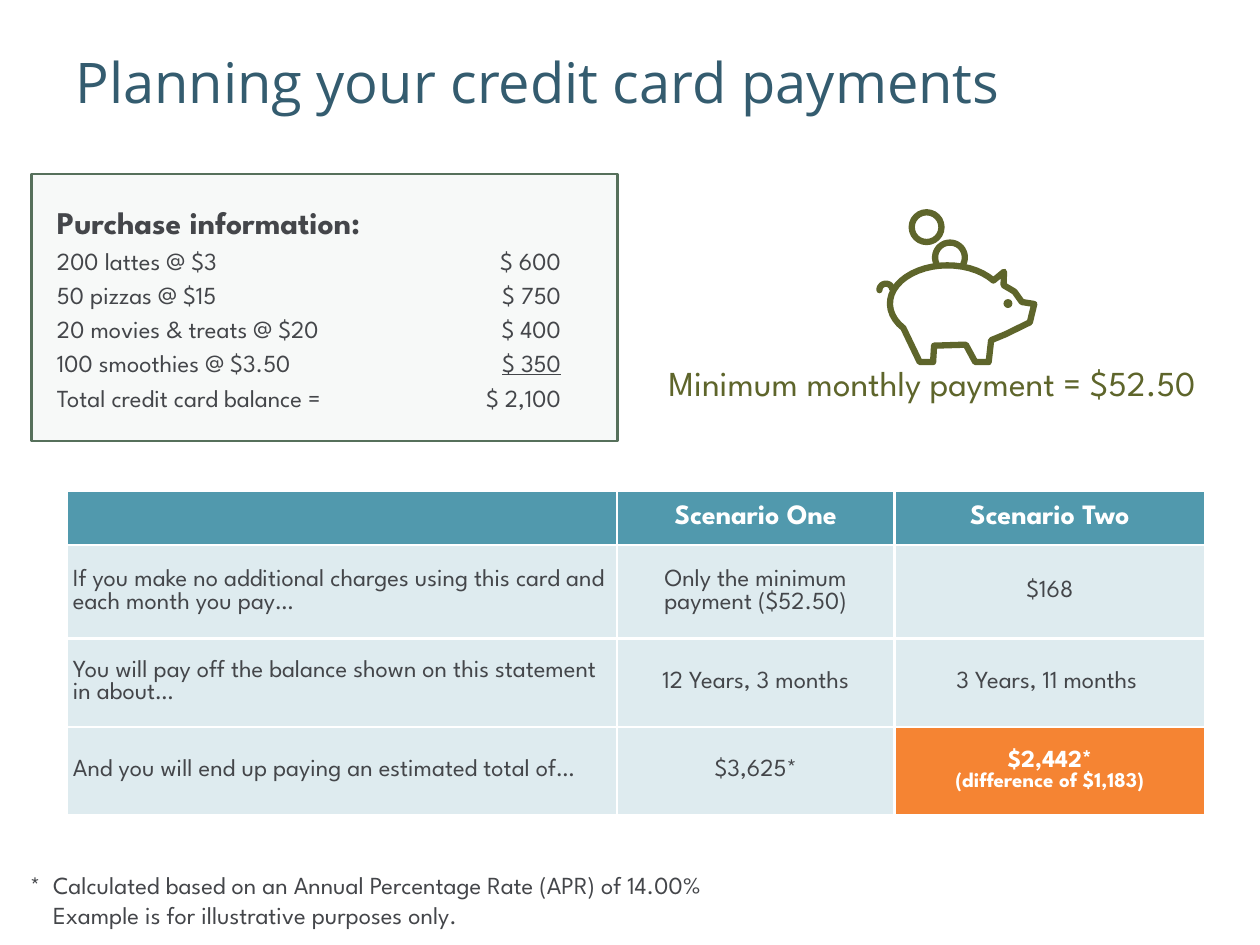
import math

from pptx import Presentation, util as u
from pptx.dml.color import RGBColor
from pptx.enum import shapes, text
from pptx.oxml import ns
from lxml import etree

Cm, Pt = u.Cm, u.Pt
BODY, HEAD = "League Spartan", "Open Sans"
COLORS = {
    "title": "345C6F", "text": "44464A", "white": "FFFFFF", "olive": "5E652B",
    "teal": "5199AD", "orange": "F58433", "panel": "D9E2DA", "panel_line": "56705B",
}

PURCHASES = [
    ("200 lattes @ $3", "$ 600"),
    ("50 pizzas @ $15", "$ 750"),
    ("20 movies & treats @ $20", "$ 400"),
    ("100 smoothies @ $3.50", "$ 350"),
    ("Total credit card balance =", "$ 2,100"),
]
SCENARIOS = [
    ["", "Scenario One", "Scenario Two"],
    ["If you make no additional charges using this card and each month you pay…",
     "Only the minimum payment ($52.50)", "$168"],
    ["You will pay off the balance shown on this statement in about…",
     "12 Years, 3 months", "3 Years, 11 months "],
    ["And you will end up paying an estimated total of…",
     "$3,625*", "$2,442*\n(difference of $1,183)"],
]


def rgb(name):
    return RGBColor.from_string(COLORS[name])


def set_font(p, size, color="text", bold=False, name=BODY):
    f = p.font
    f.name, f.size, f.bold = name, Pt(size), bold
    f.color.rgb = rgb(color)


def set_alpha(element, percent):
    clr = element.find(".//" + ns.qn("a:solidFill") + "/" + ns.qn("a:srgbClr"))
    etree.SubElement(clr, ns.qn("a:alpha"), val=str(percent * 1000))


def set_tab(p, pos, align):
    tabs = etree.SubElement(p._p.get_or_add_pPr(), ns.qn("a:tabLst"))
    etree.SubElement(tabs, ns.qn("a:tab"), pos=str(Cm(pos)), algn=align)


def set_margins(obj, size):
    obj.margin_left = obj.margin_right = obj.margin_top = obj.margin_bottom = Cm(size)


def set_borders(cell, color, width):
    tcPr = cell._tc.get_or_add_tcPr()
    for i, side in enumerate(("lnL", "lnR", "lnT", "lnB")):
        ln = etree.Element(ns.qn("a:" + side), w=str(Pt(width)))
        fill = etree.SubElement(ln, ns.qn("a:solidFill"))
        etree.SubElement(fill, ns.qn("a:srgbClr"), val=COLORS[color])
        tcPr.insert(i, ln)


def add_title(s, title):
    sp = s.shapes.title
    sp.left, sp.top, sp.width, sp.height = Cm(1.52), Cm(0.89), Cm(22.86), Cm(3.18)
    tf = sp.text_frame
    set_margins(tf, 0)
    tf.word_wrap = True
    tf.vertical_anchor = text.MSO_ANCHOR.TOP
    p = tf.paragraphs[0]
    p.text, p.alignment, p.line_spacing = title, text.PP_ALIGN.LEFT, 1.05
    set_font(p, 32, "title", name=HEAD)


def add_text(s, content, x, y, w, h):
    tf = s.shapes.add_textbox(Cm(x), Cm(y), Cm(w), Cm(h)).text_frame
    tf.word_wrap = True
    p = tf.paragraphs[0]
    p.text = content
    return tf, p


def add_purchases(s):
    sp = s.shapes.add_shape(shapes.MSO_SHAPE.RECTANGLE, Cm(0.64), Cm(3.51), Cm(11.81), Cm(5.38))
    sp.shadow.inherit = False
    sp.fill.solid()
    sp.fill.fore_color.rgb = rgb("panel")
    set_alpha(sp._element, 19)
    sp.line.color.rgb, sp.line.width = rgb("panel_line"), Pt(1.5)
    tf = sp.text_frame
    set_margins(tf, 0.51)
    tf.word_wrap = True
    tf.vertical_anchor = text.MSO_ANCHOR.MIDDLE

    heading = tf.paragraphs[0]
    heading.text = "Purchase information:"
    set_font(heading, 18, bold=True)
    for item, amount in PURCHASES:
        p = tf.add_paragraph()
        p.add_run().text = item + "\t"
        r = p.add_run()
        r.text = amount
        if amount == PURCHASES[-2][1]:  # the last amount before the total
            r.font.underline = True
        set_tab(p, 10.16, "r")
        set_font(p, 14)
    for p in tf.paragraphs:
        p.alignment, p.space_before = text.PP_ALIGN.LEFT, Pt(p.font.size.pt * 0.2)


def arc(cx, cy, rx, ry, start, end, steps=24):
    """Points along an ellipse; degrees run clockwise from the right."""
    angles = [math.radians(start + (end - start) * i / steps) for i in range(steps + 1)]
    return [(cx + rx * math.cos(a), cy + ry * math.sin(a)) for a in angles]


def add_stroke(group, points, cx, cy, close=False):
    """Draw a thick line through points given in cm from (cx, cy)."""
    points = [(Cm(cx + x), Cm(cy + y)) for x, y in points]
    fb = group.build_freeform(*points[0])
    fb.add_line_segments(points[1:], close=close)
    return fb.convert_to_shape()


def add_circle(group, cx, cy, radius):
    return group.add_shape(shapes.MSO_SHAPE.OVAL, Cm(cx - radius), Cm(cy - radius),
                           Cm(2 * radius), Cm(2 * radius))


def add_piggy_bank(s, cx, cy):
    group = s.shapes.add_group_shape().shapes
    hoof, coin_radius = 1.18, 0.3

    # One closed outline, clockwise from the hind leg; offsets from the body centre
    back = arc(0, 0, 1.16, 0.77, 140, 323)
    ear = [(1.14, -0.64), (1.13, -0.37)]
    brow = [(1.35, -0.24), (1.5, -0.03)]
    snout = [(1.75, 0.01), (1.66, 0.38)]
    chin = [(1.17, 0.62)]
    front_leg = [(0.88, 0.74), (0.83, hoof), (0.56, hoof), (0.37, 0.83)]
    hind_leg = [(-0.27, 0.85), (-0.29, hoof), (-0.56, hoof)]
    outline = back + ear + brow + snout + chin + front_leg + hind_leg

    tail = arc(-1.24, -0.27, 0.13, 0.13, 180, 350)
    dropped_coin = arc(0.05, -0.93, coin_radius, coin_radius, 155, 385)
    strokes = [
        add_stroke(group, outline, cx, cy, close=True),
        add_stroke(group, tail, cx, cy),
        add_stroke(group, dropped_coin, cx, cy),
        add_circle(group, cx - 0.42, cy - 1.54, coin_radius),
    ]
    for sp in strokes:
        sp.shadow.inherit = False
        sp.fill.background()
        sp.line.color.rgb, sp.line.width = rgb("olive"), Pt(3.6)
        ln = sp._element.spPr.find(ns.qn("a:ln"))
        ln.set("cap", "rnd")
        etree.SubElement(ln, ns.qn("a:round"))

    eye = add_circle(group, cx + 1.22, cy, 0.09)
    eye.shadow.inherit = False
    eye.fill.solid()
    eye.fill.fore_color.rgb = rgb("olive")
    eye.line.fill.background()


def add_scenarios(s):
    table = s.shapes.add_table(4, 3, Cm(1.34), Cm(9.9), Cm(22.96), Cm(6.53)).table
    for col, w in zip(table.columns, (11.1, 5.59, 6.27)):
        col.width = Cm(w)
    for row, h in zip(table.rows, (1.09, 1.88, 1.78, 1.78)):
        row.height = Cm(h)
    for i, values in enumerate(SCENARIOS):
        for j, value in enumerate(values):
            cell = table.cell(i, j)
            best = (i, j) == (3, 2)
            strong = i == 0 or best
            cell.text = value
            set_margins(cell, 0.13)
            cell.vertical_anchor = text.MSO_ANCHOR.MIDDLE
            cell.fill.solid()
            cell.fill.fore_color.rgb = rgb("orange" if best else "teal")
            if not strong:
                set_alpha(cell._tc, 19)
            set_borders(cell, "white", 1.5)
            for k, p in enumerate(cell.text_frame.paragraphs):
                p.alignment = text.PP_ALIGN.CENTER if j else text.PP_ALIGN.LEFT
                size = 16 if i == 0 else 12 if k else 14
                set_font(p, size, "white" if strong else "text", strong)


def main():
    prs = Presentation()
    prs.slide_width, prs.slide_height = Cm(25.4), Cm(19.05)
    s = prs.slides.add_slide(prs.slide_layouts[5])
    add_title(s, "Planning your credit card payments")

    # Footnote
    _, p = add_text(s, "*\tCalculated based on an Annual Percentage Rate (APR) of 14.00%\v"
                    "\tExample is for illustrative purposes only.", 0.36, 17.42, 22.2, 1.45)
    set_tab(p, 0.46, "l")
    set_font(p, 14)

    add_scenarios(s)

    # Minimum payment
    tf, p = add_text(s, "Minimum monthly payment = $52.50", 13.18, 7.29, 11.23, 0.9)
    set_margins(tf, 0)
    p.alignment = text.PP_ALIGN.CENTER
    set_font(p, 20, "olive")
    add_piggy_bank(s, 19.1, 6.12)

    add_purchases(s)
    prs.save("out.pptx")


if __name__ == "__main__":
    main()
